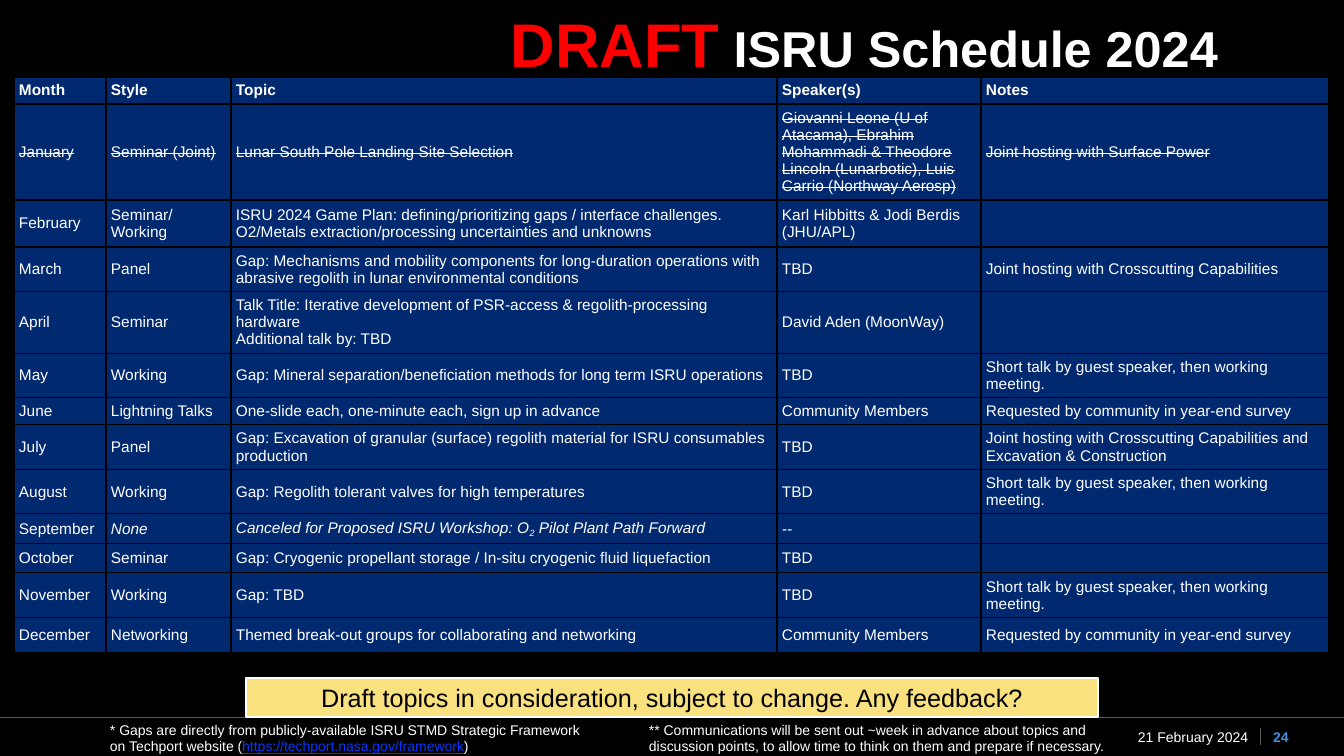
from dataclasses import dataclass

from lxml.etree import SubElement
from pptx import Presentation
from pptx.dml.color import RGBColor
from pptx.enum.shapes import MSO_CONNECTOR, MSO_SHAPE
from pptx.enum.text import MSO_ANCHOR, PP_ALIGN
from pptx.oxml import parse_xml
from pptx.oxml.ns import nsdecls, qn
from pptx.util import Emu, Pt


@dataclass(frozen=True)
class Theme:
    font: str = "Arial"
    black: str = "000000"
    white: str = "FFFFFF"
    red: str = "FF0000"
    navy: str = "002970"
    yellow: str = "F9E180"
    gray: str = "595959"
    link: str = "0537FF"
    number: str = "3E8EDE"
    draft_size: int = 44
    title_size: int = 36
    banner_size: int = 18
    table_size: int = 11
    footer_size: int = 10


THEME = Theme()

GUEST_TALK = "Short talk by guest speaker, then working meeting."
SURVEY = "Requested by community in year-end survey"
# A line break starts a new paragraph; in a tuple every second part is a subscript.
SCHEDULE = [
    ("Month", "Style", "Topic", "Speaker(s)", "Notes"),
    ("January", "Seminar (Joint)", "Lunar South Pole Landing Site Selection",
     "Giovanni Leone (U of Atacama), Ebrahim Mohammadi & Theodore Lincoln (Lunarbotic), "
     "Luis Carrio (Northway Aerosp)",
     "Joint hosting with Surface Power"),
    ("February", "Seminar/\nWorking",
     "ISRU 2024 Game Plan: defining/prioritizing gaps / interface challenges. "
     "O2/Metals extraction/processing uncertainties and unknowns",
     "Karl Hibbitts & Jodi Berdis (JHU/APL)", ""),
    ("March", "Panel",
     "Gap: Mechanisms and mobility components for long-duration operations with "
     "abrasive regolith in lunar environmental conditions",
     "TBD", "Joint hosting with Crosscutting Capabilities"),
    ("April", "Seminar",
     "Talk Title: Iterative development of PSR-access & regolith-processing hardware\n"
     "Additional talk by: TBD",
     "David Aden (MoonWay)", ""),
    ("May", "Working",
     "Gap: Mineral separation/beneficiation methods for long term ISRU operations",
     "TBD", GUEST_TALK),
    ("June", "Lightning Talks", "One-slide each, one-minute each, sign up in advance",
     "Community Members", SURVEY),
    ("July", "Panel",
     "Gap: Excavation of granular (surface) regolith material for ISRU consumables production",
     "TBD", "Joint hosting with Crosscutting Capabilities and Excavation & Construction"),
    ("August", "Working", "Gap: Regolith tolerant valves for high temperatures",
     "TBD", GUEST_TALK),
    ("September", "None",
     ("Canceled for Proposed ISRU Workshop: O", "2", " Pilot Plant Path Forward"), "--", ""),
    ("October", "Seminar",
     "Gap: Cryogenic propellant storage / In-situ cryogenic fluid liquefaction", "TBD", ""),
    ("November", "Working", "Gap: TBD", "TBD", GUEST_TALK),
    ("December", "Networking", "Themed break-out groups for collaborating and networking",
     "Community Members", SURVEY),
]
COLUMN_WIDTHS = [92, 125, 546, 204, 348]
ROW_HEIGHTS = [26, 96, 47, 44, 62, 44, 27, 45, 44, 30, 27, 45, 35]
TABLE_LEFT, TABLE_TOP, CELL_INSET = 14, 77, 5

FOOTER = {"size": THEME.footer_size}
# place, side inset, alignment, line spacing, runs
TEXTS = [
    ((435, 14, 859, 84), 0, PP_ALIGN.CENTER, 0.9, MSO_ANCHOR.TOP, [
        ("DRAFT", {"size": THEME.draft_size, "color": THEME.red, "bold": True}),
        (" ISRU Schedule 2024", {"size": THEME.title_size, "bold": True})]),
    ((1107, 717, 151, 39), 10, PP_ALIGN.RIGHT, None, MSO_ANCHOR.MIDDLE, [
        ("21 February 2024", FOOTER)]),
    ((1261, 717, 40, 39), 0, PP_ALIGN.CENTER, None, MSO_ANCHOR.MIDDLE, [
        ("24", {**FOOTER, "color": THEME.number, "bold": True})]),
    ((100, 723, 499, 30), 10, PP_ALIGN.LEFT, None, MSO_ANCHOR.MIDDLE, [
        ("* Gaps are directly from publicly-available ISRU STMD Strategic Framework "
         "on Techport website (", FOOTER),
        ("https://techport.nasa.gov/framework",
         {**FOOTER, "color": THEME.link, "underline": True}),
        (")", FOOTER)]),
    ((639, 723, 499, 30), 10, PP_ALIGN.LEFT, None, MSO_ANCHOR.MIDDLE, [
        ("** Communications will be sent out ~week in advance about topics and discussion "
         "points, to allow time to think on them and prepare if necessary.", FOOTER)]),
]
BANNER = "Draft topics in consideration, subject to change. Any feedback?"
BANNER_PLACE = (246, 678, 852, 39)
RULES = [(0, 717, 1344, 717), (1260, 728, 1260, 745)]


def px(*lengths):
    return [Emu(round(length * 914400 / 100.8)) for length in lengths]


def rgb(color):
    return RGBColor.from_string(color)


def add_span(para, text, size, color=THEME.white, bold=False, italic=False,
             underline=False, strike=False, subscript=False):
    span = para.add_run()
    span.text = text
    font = span.font
    font.name, font.size, font.color.rgb = THEME.font, Pt(size), rgb(color)
    font.bold, font.italic, font.underline = bold, italic, underline
    if strike:
        font._element.set("strike", "sngStrike")
    if subscript:
        font._element.set("baseline", "-25000")


def add_rule(page, ends):
    rule = page.shapes.add_connector(MSO_CONNECTOR.STRAIGHT, *px(*ends))
    rule.line.color.rgb, rule.line.width = rgb(THEME.gray), Pt(0.5)
    SubElement(rule._element.spPr, qn("a:effectLst"))


def add_text(page, place, inset, align, spacing, anchor, runs):
    box = page.shapes.add_textbox(*px(*place))
    frame = box.text_frame
    frame.word_wrap, frame.vertical_anchor = True, anchor
    frame.margin_left, frame.margin_right = px(inset, inset)
    frame.margin_top = frame.margin_bottom = 0
    para = frame.paragraphs[0]
    para.alignment, para.line_spacing = align, spacing
    for text, style in runs:
        add_span(para, text, **style)


def add_banner(page):
    box = page.shapes.add_shape(MSO_SHAPE.RECTANGLE, *px(*BANNER_PLACE))
    box.shadow.inherit = False
    box.fill.solid()
    box.fill.fore_color.rgb = rgb(THEME.yellow)
    box.line.color.rgb, box.line.width = rgb(THEME.white), Pt(1)
    box.text_frame.word_wrap = True
    box.text_frame.vertical_anchor = MSO_ANCHOR.MIDDLE
    para = box.text_frame.paragraphs[0]
    para.alignment = PP_ALIGN.CENTER
    add_span(para, BANNER, THEME.banner_size, THEME.black)


def style_cell(cell):
    cell.vertical_anchor = MSO_ANCHOR.MIDDLE
    (cell.margin_left, cell.margin_right,
     cell.margin_top, cell.margin_bottom) = px(*[CELL_INSET] * 4)
    cell.fill.solid()
    cell.fill.fore_color.rgb = rgb(THEME.navy)
    properties = cell._tc.get_or_add_tcPr()
    for index, side in enumerate(("lnL", "lnR", "lnT", "lnB")):
        properties.insert(index, parse_xml(
            f'<a:{side} {nsdecls("a")} w="{Pt(1)}"><a:solidFill>'
            f'<a:srgbClr val="{THEME.black}"/></a:solidFill></a:{side}>'))


def fill_cell(cell, content, style):
    frame = cell.text_frame
    if not content:
        end = frame.paragraphs[0]._p.get_or_add_endParaRPr()
        end.set("sz", str(THEME.table_size * 100))
        return
    paragraphs = [content] if isinstance(content, tuple) else [
        (line,) for line in content.split("\n")]
    for number, parts in enumerate(paragraphs):
        para = frame.add_paragraph() if number else frame.paragraphs[0]
        for index, part in enumerate(parts):
            add_span(para, part, THEME.table_size, subscript=index % 2 == 1, **style)


def add_schedule(page):
    place = px(TABLE_LEFT, TABLE_TOP, sum(COLUMN_WIDTHS), sum(ROW_HEIGHTS))
    table = page.shapes.add_table(len(SCHEDULE), len(COLUMN_WIDTHS), *place).table
    for column, width in zip(table.columns, px(*COLUMN_WIDTHS)):
        column.width = width
    for row, height in zip(table.rows, px(*ROW_HEIGHTS)):
        row.height = height
    for row_number, contents in enumerate(SCHEDULE):
        for column_number, content in enumerate(contents):
            cell = table.cell(row_number, column_number)
            style_cell(cell)
            fill_cell(cell, content, {
                "bold": row_number == 0,
                "strike": contents[0] == "January",
                "italic": contents[0] == "September" and column_number > 0})


def main():
    deck = Presentation()
    deck.slide_width, deck.slide_height = px(1344, 756)
    page = deck.slides.add_slide(deck.slide_layouts[6])
    page.background.fill.solid()
    page.background.fill.fore_color.rgb = rgb(THEME.black)
    for ends in RULES:
        add_rule(page, ends)
    add_schedule(page)
    add_banner(page)
    for text in TEXTS:
        add_text(page, *text)
    deck.save("out.pptx")


if __name__ == "__main__":
    main()
